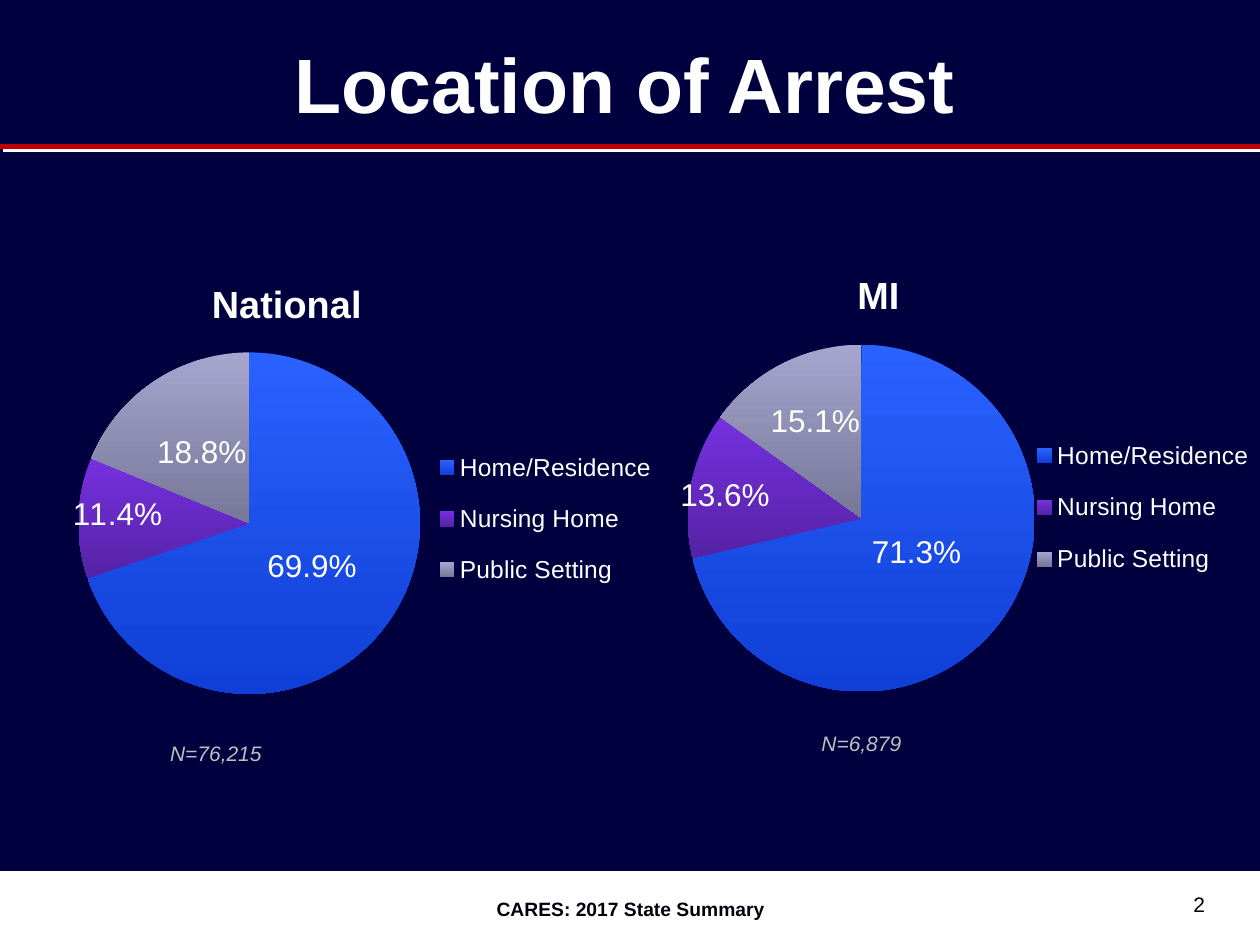
from lxml.etree import SubElement
from pptx import Presentation
from pptx.chart.data import CategoryChartData
from pptx.dml.color import RGBColor
from pptx.enum.chart import XL_CHART_TYPE, XL_LABEL_POSITION, XL_LEGEND_POSITION
from pptx.enum.shapes import MSO_CONNECTOR, MSO_SHAPE
from pptx.enum.text import MSO_ANCHOR, PP_ALIGN
from pptx.oxml import parse_xml
from pptx.oxml.ns import nsdecls, qn
from pptx.util import Cm, Pt

WIDTH, HEIGHT = 25.4, 19.05
FONT = "Arial"
LOCATIONS = ["Home/Residence", "Nursing Home", "Public Setting"]
# Top and bottom colour of each slice
SLICE_COLORS = [("2A62FF", "0F3FD6"), ("7630E0", "5523A5"), ("A5A5CE", "777798")]


def rgb(color):
    return RGBColor.from_string(color)


def format_font(font, size, color, bold=False, italic=False):
    font.name, font.size = FONT, Pt(size)
    font.bold, font.italic = bold, italic
    font.color.rgb = rgb(color)


def write(frame, text, size=12, color="FFFFFF", align=PP_ALIGN.LEFT,
          anchor=MSO_ANCHOR.TOP, **style):
    frame.word_wrap = True
    frame.vertical_anchor = anchor
    paragraph = frame.paragraphs[0]
    paragraph.alignment = align
    run = paragraph.add_run()
    run.text = text
    format_font(run.font, size, color, **style)


def add_text(slide, box, text, **style):
    textbox = slide.shapes.add_textbox(*map(Cm, box))
    write(textbox.text_frame, text, **style)


def set_layout(element, index, **fractions):
    """Place a chart part by fractions of the chart's size."""
    for old in element.findall(qn("c:layout")):
        element.remove(old)
    layout = parse_xml(f"<c:layout {nsdecls('c')}><c:manualLayout/></c:layout>")
    for tag, value in fractions.items():
        SubElement(layout[0], qn(f"c:{tag}")).set("val", str(value))
    element.insert(index, layout)


def add_footer(slide, box):
    left, top, width, height = box
    # White band
    band = slide.shapes.add_shape(MSO_SHAPE.RECTANGLE, *map(Cm, box))
    band.shadow.inherit = False
    band.fill.solid()
    band.fill.fore_color.rgb = rgb("FFFFFF")
    band.line.color.rgb = rgb("FFFFFF")
    band.line.width = Pt(0.75)
    # Report name and page number
    add_text(slide, (left + 8.69, top + 0.4, 8.05, 0.74), "CARES: 2017 State Summary",
             size=11, color="00000C", align=PP_ALIGN.CENTER, bold=True)
    add_text(slide, (left + 18.62, top + 0.2, 5.92, 0.84), "2", color="00000C",
             align=PP_ALIGN.RIGHT, anchor=MSO_ANCHOR.BOTTOM)


def add_header(slide, box):
    left, top, width, height = box
    # Title
    title = slide.shapes.title
    title.left, title.top = Cm(left + 0.33), Cm(top + 0.08)
    title.width, title.height = Cm(width - 0.86), Cm(3.18)
    write(title.text_frame, "Location of Arrest", size=44, align=PP_ALIGN.CENTER,
          anchor=MSO_ANCHOR.MIDDLE, bold=True)
    # Red rule with a white shadow
    rule_top = Cm(top + height)
    rule = slide.shapes.add_connector(MSO_CONNECTOR.STRAIGHT, Cm(left), rule_top,
                                      Cm(left + width), rule_top)
    rule.line.color.rgb = rgb("C00000")
    rule.line.width = Pt(3)
    rule._element.spPr.append(parse_xml(
        f'<a:effectLst {nsdecls("a")}><a:outerShdw blurRad="0" dist="35560" '
        'dir="2700000" algn="tl" rotWithShape="0"><a:srgbClr val="FFFFFF"/>'
        "</a:outerShdw></a:effectLst>"))


def format_slice(series, index, shift, label_text):
    point = series.points[index]
    # Gradient from top to bottom
    fill = point.format.fill
    fill.gradient()
    fill.gradient_angle = 270
    for stop, color in zip(fill.gradient_stops, SLICE_COLORS[index]):
        stop.color.rgb = rgb(color)
    point.format.line.fill.background()
    # Label, shifted from the middle of the slice
    label = point.data_label
    if label_text:
        write(label.text_frame, label_text, size=18)
    else:
        format_font(label.font, 18, "FFFFFF")
    label.position = XL_LABEL_POSITION.CENTER
    element = series._element.xpath(f"c:dLbls/c:dLbl[c:idx/@val='{index}']")[0]
    if not label_text:
        element.insert(1, parse_xml(
            f'<c:numFmt {nsdecls("c")} formatCode="0.0%" sourceLinked="0"/>'))
    element.find(qn("c:showVal")).set("val", "0")
    element.find(qn("c:showPercent")).set("val", "1")
    set_layout(element, 1, x=shift[0], y=shift[1])


def add_arrest_pie(slide, box, region, shares, count, note_left, title_at,
                   legend_top, label_shifts, label_texts=(None, None, None)):
    left, top, width, height = box
    data = CategoryChartData()
    data.categories = LOCATIONS
    data.add_series("Series 1", shares)
    chart = slide.shapes.add_chart(XL_CHART_TYPE.PIE, *map(Cm, box), data).chart
    format_font(chart.font, 18, "FFFFFF")
    # Region as chart title
    chart.has_title = True
    write(chart.chart_title.text_frame, region, size=21.6, bold=True)
    set_layout(chart.chart_title._element, 1, xMode="edge", yMode="edge",
               x=title_at[0], y=title_at[1])
    # Legend
    chart.has_legend = True
    chart.legend.position = XL_LEGEND_POSITION.RIGHT
    chart.legend.include_in_layout = False
    format_font(chart.legend.font, 14, "FFFFFF")
    set_layout(chart.legend._element, 1, xMode="edge", yMode="edge",
               x=0.65, y=legend_top, w=0.35, h=0.28)
    # Pie and slices
    plot = chart.plots[0]
    plot.vary_by_categories = True
    set_layout(plot._element.getparent(), 0, layoutTarget="inner", xMode="edge",
               yMode="edge", x=0.103, y=0.276, w=0.548, h=0.542)
    series = plot.series[0]
    labels = series.data_labels
    labels.show_value, labels.show_percentage = False, True
    labels.number_format, labels.number_format_is_linked = "0.0%", False
    format_font(labels.font, 18, "FFFFFF")
    for index, (shift, text) in enumerate(zip(label_shifts, label_texts)):
        format_slice(series, index, shift, text)
    # Number of cases
    add_text(slide, (left + note_left, top + 11.21, 3.63, 0.76), count,
             color="BFBFBF", italic=True)


def main():
    prs = Presentation()
    prs.slide_width, prs.slide_height = Cm(WIDTH), Cm(HEIGHT)
    slide = prs.slides.add_slide(prs.slide_layouts[5])
    slide.background.fill.solid()
    slide.background.fill.fore_color.rgb = rgb("00003E")

    add_footer(slide, (0, 17.57, WIDTH, HEIGHT - 17.57))
    add_header(slide, (0, 0, WIDTH, 2.95))
    add_arrest_pie(slide, (12.5, 3.39, 12.9, 12.9), "MI", (71.3, 13.6, 15.1),
                   "N=6,879", note_left=3.81, title_at=(0.36, 0.15), legend_top=0.39,
                   label_shifts=[(-0.02, -0.03), (-0.08, -0.01), (-0.01, -0.03)])
    add_arrest_pie(slide, (0, 3.6, 13.33, 12.7), "National", (69.8, 11.4, 18.8),
                   "N=76,215", note_left=3.18, title_at=(0.31, 0.15), legend_top=0.4,
                   label_shifts=[(-0.01, -0.01), (-0.07, -0.01), (0, 0)],
                   label_texts=("69.9%", None, None))
    prs.save("out.pptx")


if __name__ == "__main__":
    main()
